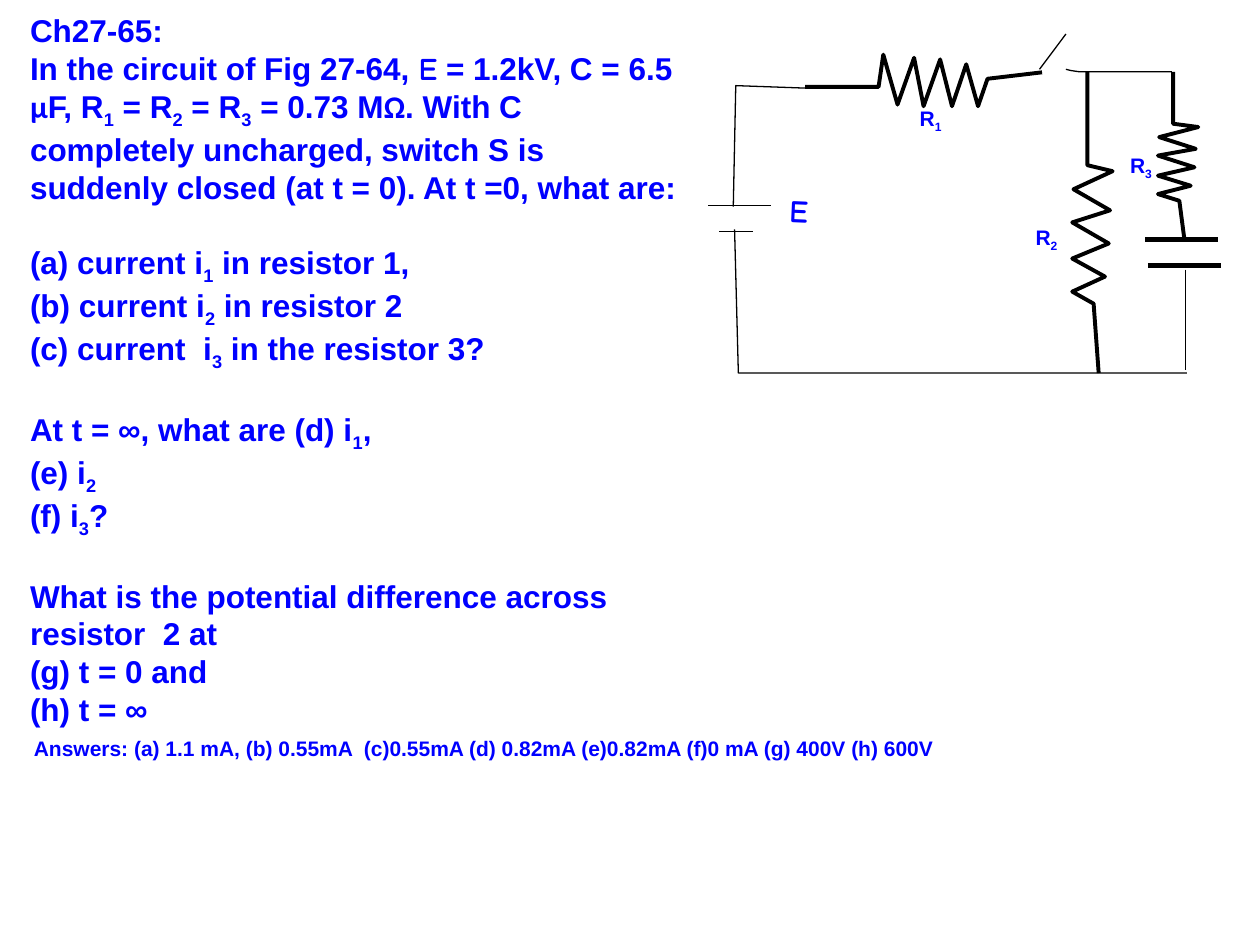
"""Builds a slide with a circuit problem and its diagram."""
from pptx import Presentation, util as u
from pptx.dml.color import RGBColor
from pptx.enum import shapes, text
from pptx.oxml import ns
from lxml import etree

BLUE = RGBColor(0x00, 0x00, 0xFF)
BLACK = RGBColor(0x00, 0x00, 0x00)
FONTS = {"E": "Comic Neue", "μ": "Calibri", "Ω": "Calibri"}
ZIGZAG = [(0, 0), (.31, 0), (.33, .2), (.39, -.11), (.46, .18), (.5, -.12),
          (.57, .17), (.62, -.12), (.68, .14), (.73, -.12), (.77, .05), (1, .09)]
PROBLEM = [
    ("Ch27-65:", 0),
    ("In the circuit of Fig 27-64, E = 1.2kV, C = 6.5 μF, R_1 = R_2 = R_3 = 0.73 MΩ. "
     "With C completely uncharged, switch S is suddenly closed (at t = 0). "
     "At t =0, what are:", 0),
    ("(a) current i_1 in resistor 1,", 1),
    ("(b) current i_2 in resistor 2", 0),
    ("(c) current  i_3 in the resistor 3?", 0),
    ("At t = ∞, what are (d) i_1,", 1),
    ("(e) i_2", 0),
    ("(f) i_3?", 0),
    ("What is the potential difference across resistor  2 at", 1),
    ("(g) t = 0 and", 0),
    ("(h) t = ∞", 0),
]
ANSWERS = ("Answers: (a) 1.1 mA, (b) 0.55mA  (c)0.55mA (d) 0.82mA (e)0.82mA "
           "(f)0 mA (g) 400V (h) 600V")


class Board:
    """Holds the style and the slide; lengths are cells of a 100 by 75 grid."""

    def __init__(self, deck):
        self.slide = deck.slides.add_slide(deck.slide_layouts[6])
        self.cell = deck.slide_width // 100

    def grid(self, *cells):
        return [round(c * self.cell) for c in cells]

    def ink(self, shape, width):
        shape.line.color.rgb = BLACK
        shape.line.width = u.Pt(width)

    def wire(self, *points, width=.75):
        start, *rest = [self.grid(*p) for p in points]
        draft = self.slide.shapes.build_freeform(*start)
        draft.add_line_segments(rest, close=False)
        shape = draft.convert_to_shape()
        shape.shadow.inherit = False
        shape.fill.background()
        self.ink(shape, width)

    def line(self, left, top, right, low, width=.75):
        shape = self.slide.shapes.add_connector(
            shapes.MSO_CONNECTOR.STRAIGHT, *self.grid(left, top, right, low))
        etree.SubElement(shape._element.spPr, ns.qn("a:effectLst"))
        self.ink(shape, width)

    def coil(self, left, top, size, flat=False):
        if flat:
            points = [(left + size * a, top - 12.8 * b) for a, b in ZIGZAG]
        else:
            points = [(left + 10 * b, top + size * a) for a, b in ZIGZAG]
        self.wire(*points, width=2.25)

    def fill(self, para, words, size):
        para.font.size = u.Pt(size)
        para.font.bold = True
        para.font.color.rgb = BLUE
        para.font.name = "Arial"
        for mark in FONTS:
            words = words.replace(mark, f"|{mark}|")
        for digit in "123":
            words = words.replace(f"_{digit}", f"|_{digit}|")
        for part in filter(None, words.split("|")):
            run = para.add_run()
            run.text = part.lstrip("_")
            if part in FONTS:
                run.font.name = FONTS[part]
            if part.startswith("_"):
                run.font._element.set("baseline", "-25000")

    def note(self, box, items, size, wrap=False, turn=0):
        shape = self.slide.shapes.add_textbox(*self.grid(*box))
        shape.rotation = turn
        frame = shape.text_frame
        frame.word_wrap = wrap
        if not wrap:
            frame.auto_size = text.MSO_AUTO_SIZE.SHAPE_TO_FIT_TEXT
        for i, (words, gap) in enumerate(items):
            para = frame.add_paragraph() if i else frame.paragraphs[0]
            para.space_before = u.Pt(gap * 21.6)
            self.fill(para, words, size)


def main():
    deck = Presentation()
    deck.slide_width, deck.slide_height = u.Inches(10), u.Inches(7.5)
    board = Board(deck)

    board.note((1.4, .4, 53.7, 56.2), PROBLEM, 18, wrap=True)
    board.note((61.6, 14.7, 3.8, 7.1), [("E", 0)], 18, turn=2.6)
    for name, left, top in (("R_1", 72, 7.9), ("R_2", 81.2, 17.3), ("R_3", 88.7, 11.6)):
        board.note((left, top, 3.9, 3), [(name, 0)], 12)
    board.note((1.7, 57.9, 74.1, 3), [(ANSWERS, 0)], 12)

    board.coil(63.9, 6.9, 18.8, flat=True)
    board.coil(86.3, 5.7, 23.9)
    board.coil(93.1, 5.7, 13.3)

    board.wire((63.9, 7), (58.4, 6.8), (58.2, 16.4))
    board.wire((58.3, 18.2), (58.6, 29.6), (94.2, 29.6))
    board.wire((84.6, 5.5), (85, 5.6), (85.7, 5.7), (93, 5.7))
    board.line(82.5, 5.5, 84.6, 2.7)
    board.line(94.1, 21.4, 94.1, 29.4)
    board.line(56.2, 16.3, 61.2, 16.3)
    board.line(57.1, 18.4, 59.8, 18.4)
    board.line(90.9, 19, 96.7, 19, width=3)
    board.line(91.1, 21.1, 96.9, 21.1, width=3)
    deck.save("out.pptx")


if __name__ == "__main__":
    main()
